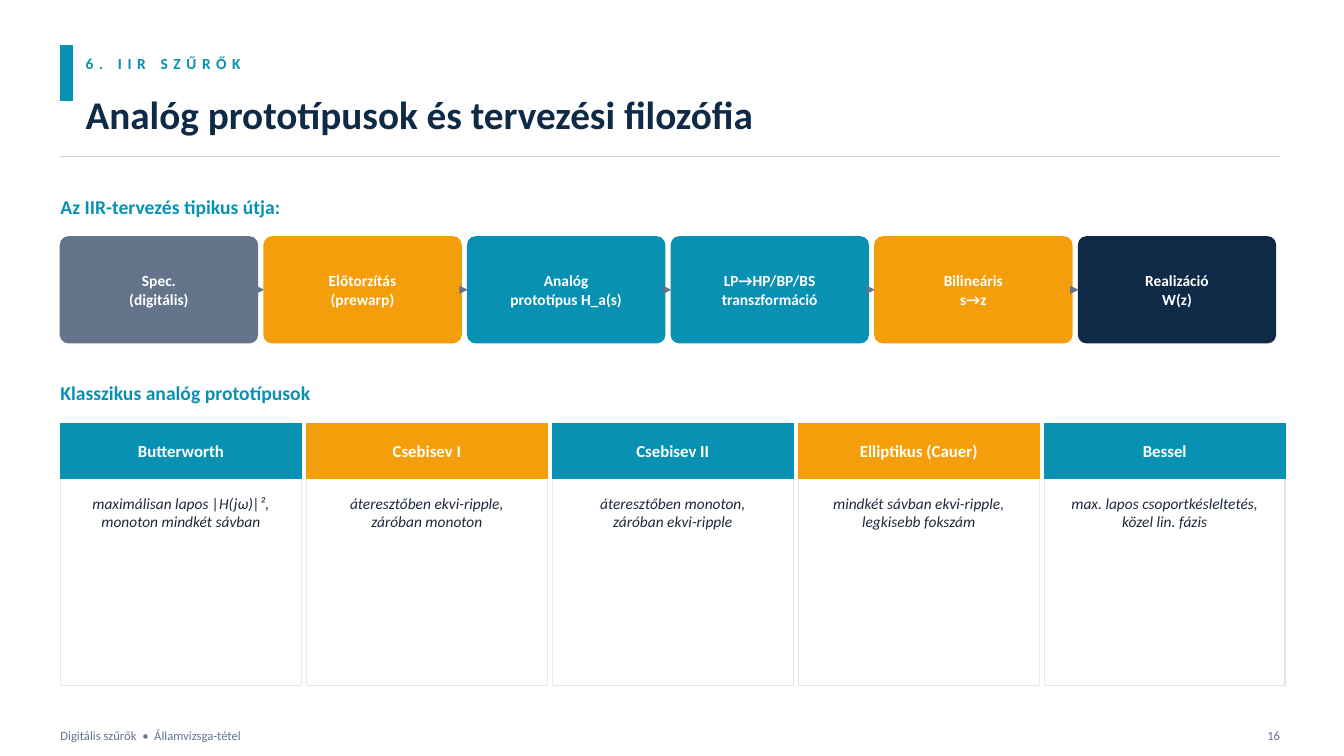
import pptx
import pptx.dml.color
import pptx.enum.shapes
import pptx.enum.text
import pptx.oxml
import pptx.oxml.ns
import pptx.util

Pt = pptx.util.Pt
Shape = pptx.enum.shapes.MSO_SHAPE
Connector = pptx.enum.shapes.MSO_CONNECTOR
Align = pptx.enum.text.PP_ALIGN
Anchor = pptx.enum.text.MSO_ANCHOR


def color(value):
    return pptx.dml.color.RGBColor.from_string(value)


class SlideBuilder:
    font = "Calibri"
    teal = "0891B2"
    amber = "F59E0B"
    navy = "0F2A47"
    slate = "64748B"
    ink = "1E293B"
    rule = "CBD5E1"
    border = "E2E8F0"
    white = "FFFFFF"

    def __init__(self, presentation):
        self.slide = presentation.slides.add_slide(presentation.slide_layouts[5])

    def set_text(self, shape, lines, size, ink, bold=False, italic=False,
                 align=Align.LEFT, anchor=Anchor.MIDDLE, side=0, top=0, spacing=0):
        frame = shape.text_frame
        frame.word_wrap = True
        frame.auto_size = pptx.enum.text.MSO_AUTO_SIZE.NONE
        frame.vertical_anchor = anchor
        frame.margin_left = frame.margin_right = Pt(side)
        frame.margin_top, frame.margin_bottom = Pt(top), 0
        for index, line in enumerate(lines):
            paragraph = frame.add_paragraph() if index else frame.paragraphs[0]
            paragraph.alignment = align
            run = paragraph.add_run()
            run.text = line
            run.font.name = self.font
            run.font.size = Pt(size)
            run.font.bold = bold
            run.font.italic = italic
            run.font.color.rgb = color(ink)
            if spacing:
                run.font._element.set("spc", str(spacing * 100))

    def title(self, text, left, top, width, height):
        shape = self.slide.shapes.title
        shape.left, shape.top = Pt(left), Pt(top)
        shape.width, shape.height = Pt(width), Pt(height)
        self.set_text(shape, [text], 28, self.navy, bold=True)

    def text(self, text, left, top, width, height, size, ink, **style):
        shape = self.slide.shapes.add_textbox(Pt(left), Pt(top), Pt(width), Pt(height))
        self.set_text(shape, [text], size, ink, **style)

    def heading(self, text, top):
        self.text(text, 43.2, top, 871.2, 28.8, 14, self.teal, bold=True)

    def box(self, left, top, width, height, fill, line=None, rounding=None):
        kind = Shape.RECTANGLE if rounding is None else Shape.ROUNDED_RECTANGLE
        shape = self.slide.shapes.add_shape(kind, Pt(left), Pt(top), Pt(width), Pt(height))
        if rounding is not None:
            shape.adjustments[0] = rounding
        shape.shadow.inherit = False
        shape.fill.solid()
        shape.fill.fore_color.rgb = color(fill)
        shape.line.color.rgb = color(line or fill)
        shape.line.width = Pt(1)
        return shape

    def line(self, left, top, right, bottom, ink, width):
        connector = self.slide.shapes.add_connector(
            Connector.STRAIGHT, Pt(left), Pt(top), Pt(right), Pt(bottom))
        connector.line.color.rgb = color(ink)
        connector.line.width = Pt(width)
        connector._element.spPr.append(pptx.oxml.parse_xml(
            f"<a:effectLst {pptx.oxml.ns.nsdecls('a')}/>"))
        return connector

    def arrow(self, source, target):
        connector = self.line(0, 0, 0, 0, self.slate, 1.5)
        connector.begin_connect(source, 3)
        connector.end_connect(target, 1)
        connector.line._get_or_add_ln().append(pptx.oxml.parse_xml(
            f"<a:tailEnd {pptx.oxml.ns.nsdecls('a')} type='triangle'/>"))

    def flow(self, steps, left, top, width, height, pitch):
        previous = None
        for index, (fill, *lines) in enumerate(steps):
            step = self.box(left + index * pitch, top, width, height, fill, rounding=0.076)
            self.set_text(step, lines, 11, self.white, bold=True, align=Align.CENTER)
            if previous is not None:
                self.arrow(previous, step)
            previous = step

    def cards(self, prototypes, left, top, width, height, pitch):
        fills = [self.teal, self.amber]
        for index, (name, *lines) in enumerate(prototypes):
            x = left + index * pitch
            card = self.box(x, top, width, height, self.white, self.border)
            self.set_text(card, lines, 11, self.ink, italic=True, align=Align.CENTER,
                          anchor=Anchor.TOP, side=10.8, top=50.4)
            header = self.box(x, top, width, 39.6, fills[index % 2])
            self.set_text(header, [name], 12, self.white, bold=True, align=Align.CENTER)


def main():
    presentation = pptx.Presentation()
    presentation.slide_width = Pt(960)
    presentation.slide_height = Pt(540)
    page = SlideBuilder(presentation)

    page.box(43.2, 32.4, 8.64, 39.6, page.teal)
    page.text("6. IIR SZŰRŐK", 61.2, 32.4, 576, 25.2, 11, page.teal, bold=True, spacing=4)
    page.title("Analóg prototípusok és tervezési filozófia", 61.2, 56.16, 864, 50.4)
    page.line(43.2, 111.6, 914.4, 111.6, page.rule, 0.75)

    page.heading("Az IIR-tervezés tipikus útja:", 133.2)
    page.flow([
        (page.slate, "Spec.", "(digitális)"),
        (page.amber, "Előtorzítás", "(prewarp)"),
        (page.teal, "Analóg", "prototípus H_a(s)"),
        (page.teal, "LP→HP/BP/BS", "transzformáció"),
        (page.amber, "Bilineáris", "s→z"),
        (page.navy, "Realizáció", "W(z)"),
    ], 43.2, 169.2, 140.7, 75.6, 145.44)

    page.heading("Klasszikus analóg prototípusok", 266.4)
    page.cards([
        ("Butterworth", "maximálisan lapos |H(jω)|²,", "monoton mindkét sávban"),
        ("Csebisev I", "áteresztőben ekvi-ripple,", "záróban monoton"),
        ("Csebisev II", "áteresztőben monoton,", "záróban ekvi-ripple"),
        ("Elliptikus (Cauer)", "mindkét sávban ekvi-ripple,", "legkisebb fokszám"),
        ("Bessel", "max. lapos csoportkésleltetés,", "közel lin. fázis"),
    ], 43.2, 302.4, 172.08, 187.2, 175.68)

    page.text("Digitális szűrők  •  Államvizsga-tétel", 43.2, 514.8, 576, 21.6, 9, page.slate)
    page.text("16", 892.8, 514.8, 21.6, 21.6, 9, page.slate, align=Align.RIGHT)
    presentation.save("out.pptx")


if __name__ == "__main__":
    main()
